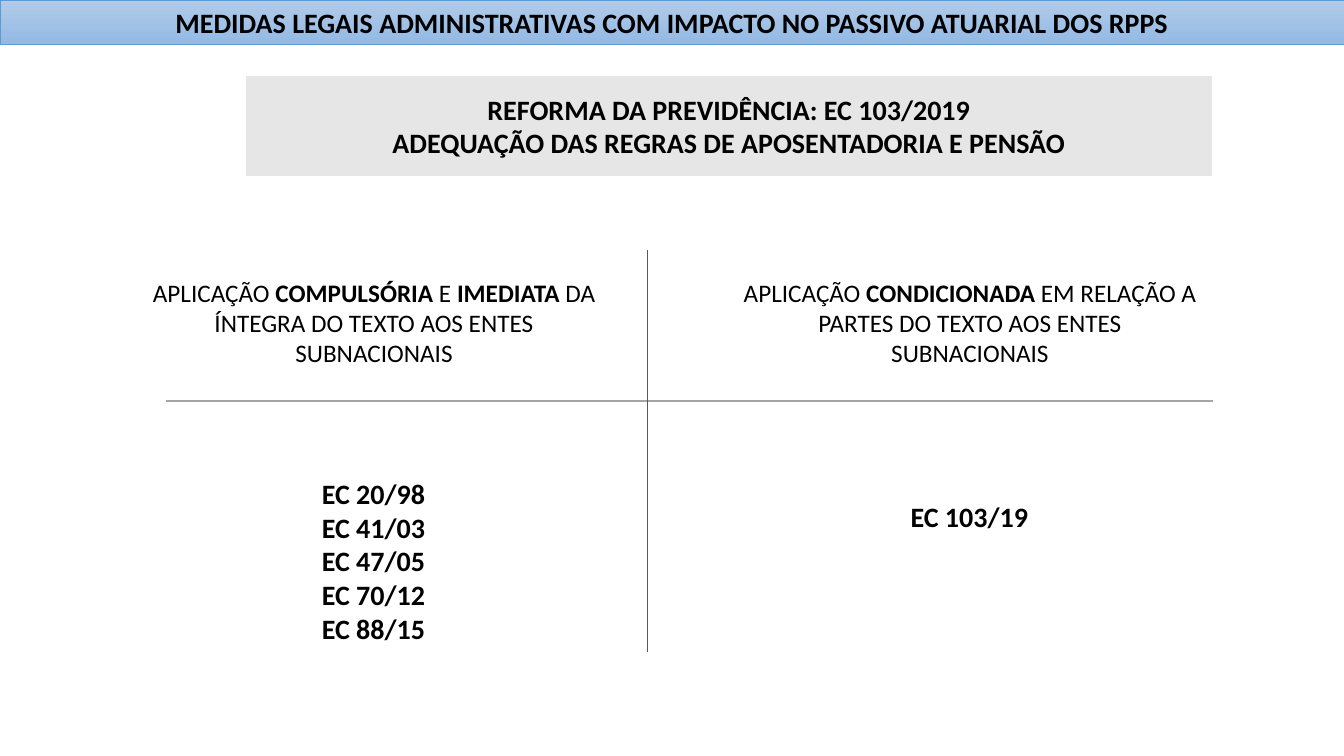
from lxml.etree import SubElement
from pptx import Presentation
from pptx.dml.color import RGBColor
from pptx.enum.shapes import MSO_CONNECTOR, MSO_SHAPE
from pptx.enum.text import MSO_ANCHOR, PP_ALIGN
from pptx.oxml.ns import qn
from pptx.util import Inches, Pt

BLACK = RGBColor(0x00, 0x00, 0x00)
WHITE = RGBColor(0xFF, 0xFF, 0xFF)
PANEL = RGBColor(0xE7, 0xE6, 0xE6)
BLUE = RGBColor(0x5B, 0x9B, 0xD5)
BLUE_TOP = RGBColor(0xB1, 0xCB, 0xE9)
BLUE_BOTTOM = RGBColor(0x93, 0xB9, 0xE4)
GREY = RGBColor(0xA5, 0xA5, 0xA5)
DARK_GREY = RGBColor(0x59, 0x59, 0x59)


class SlideBuilder:
    """Draws styled elements on one slide; ** in text toggles bold."""

    font = "Calibri"

    def __init__(self, slide):
        self.slide = slide

    def fill_text(self, tf, lines, size, bold):
        tf.word_wrap = True
        for i, line in enumerate(lines):
            p = tf.add_paragraph() if i else tf.paragraphs[0]
            p.alignment = PP_ALIGN.CENTER
            p.font.name = self.font
            p.font.size = Pt(size)
            p.font.bold = bold
            p.font.color.rgb = BLACK
            for j, part in enumerate(line.split("**")):
                r = p.add_run()
                r.text = part
                if j % 2:
                    r.font.bold = True

    def box(self, x, y, w, h, lines, fills, line, line_width):
        sp = self.slide.shapes.add_shape(
            MSO_SHAPE.RECTANGLE, Inches(x), Inches(y), Inches(w), Inches(h))
        sp.shadow.inherit = False
        if len(fills) > 1:
            sp.fill.gradient()
            sp.fill.gradient_angle = 270
            for stop, color in zip(sp.fill.gradient_stops, fills):
                stop.color.rgb = color
        else:
            sp.fill.solid()
            sp.fill.fore_color.rgb = fills[0]
        sp.line.color.rgb = line
        sp.line.width = Pt(line_width)
        sp.text_frame.vertical_anchor = MSO_ANCHOR.MIDDLE
        self.fill_text(sp.text_frame, lines, 20, True)

    def text(self, x, y, w, h, lines, size=20, bold=True):
        sp = self.slide.shapes.add_textbox(
            Inches(x), Inches(y), Inches(w), Inches(h))
        self.fill_text(sp.text_frame, lines, size, bold)

    def line(self, x1, y1, x2, y2, color, width):
        cx = self.slide.shapes.add_connector(
            MSO_CONNECTOR.STRAIGHT,
            Inches(x1), Inches(y1), Inches(x2), Inches(y2))
        cx.line.color.rgb = color
        cx.line.width = Pt(width)
        SubElement(cx._element.spPr, qn("a:effectLst"))


def main():
    prs = Presentation()
    prs.slide_width = Inches(13.33)
    prs.slide_height = Inches(7.5)
    s = SlideBuilder(prs.slides.add_slide(prs.slide_layouts[6]))

    s.box(0, 0, 13.33, 0.44,
          ["MEDIDAS LEGAIS ADMINISTRATIVAS COM IMPACTO NO PASSIVO ATUARIAL DOS RPPS"],
          [BLUE_TOP, BLUE_BOTTOM], BLUE, 0.5)
    s.box(2.43, 0.75, 9.6, 1,
          ["REFORMA DA PREVIDÊNCIA: EC 103/2019",
           "ADEQUAÇÃO DAS REGRAS DE APOSENTADORIA E PENSÃO"],
          [PANEL], WHITE, 1)

    s.line(1.65, 3.98, 12.03, 3.98, GREY, 1)
    s.line(6.42, 2.48, 6.42, 6.47, DARK_GREY, 0.5)

    s.text(1.34, 4.68, 4.73, 1.78,
           ["EC 20/98", "EC 41/03", "EC 47/05", "EC 70/12", "EC 88/15"])
    s.text(7.25, 4.91, 4.73, 0.44, ["EC 103/19"])

    headings = [
        (1.31, "APLICAÇÃO **COMPULSÓRIA** E **IMEDIATA** DA ÍNTEGRA DO TEXTO "
               "AOS ENTES SUBNACIONAIS"),
        (7.22, "APLICAÇÃO **CONDICIONADA** EM RELAÇÃO A PARTES DO TEXTO "
               "AOS ENTES SUBNACIONAIS"),
    ]
    for x, heading in headings:
        s.text(x, 2.7, 4.8, 1.01, [heading], 18, False)

    prs.save("out.pptx")


if __name__ == "__main__":
    main()
